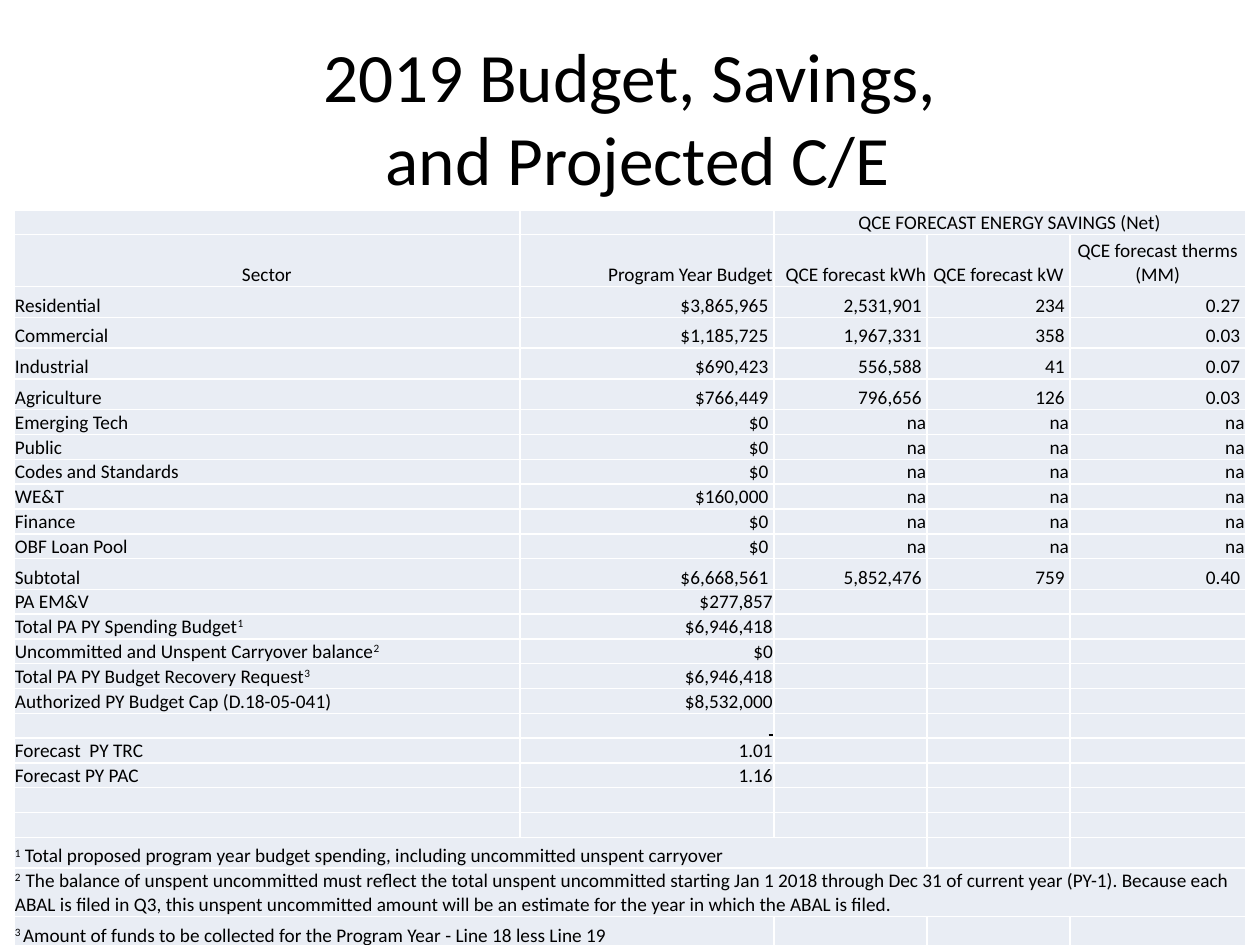
"""Build the 2019 budget, savings and cost-effectiveness slide."""
import pptx
import pptx.dml.color
import pptx.enum.text
import pptx.util

Cm, Pt = pptx.util.Cm, pptx.util.Pt
RGB = pptx.dml.color.RGBColor
ALIGN = pptx.enum.text.PP_ALIGN
ANCHOR = pptx.enum.text.MSO_ANCHOR

THEME = {
    "font": "Calibri",
    "ink": RGB.from_string("000000"),
    "fill": RGB.from_string("E9EDF4"),
    "title": Pt(39.6),
    "cell": Pt(11),
    "super": "30000",
}

TITLE = "2019 Budget, Savings,\v and Projected C/E"
NONE = ("na", "na", "na")
ROWS = [
    ("", "", "QCE FORECAST ENERGY SAVINGS (Net)"),
    ("Sector", "Program Year Budget", "QCE forecast kWh", "QCE forecast kW",
     "QCE forecast therms (MM)"),
    ("Residential", "$3,865,965 ", "2,531,901 ", "234 ", "0.27 "),
    ("Commercial", "$1,185,725 ", "1,967,331 ", "358 ", "0.03 "),
    ("Industrial", "$690,423 ", "556,588 ", "41 ", "0.07 "),
    ("Agriculture", "$766,449 ", "796,656 ", "126 ", "0.03 "),
    ("Emerging Tech", "$0 ", *NONE),
    ("Public", "$0 ", *NONE),
    ("Codes and Standards", "$0 ", *NONE),
    ("WE&T", "$160,000 ", *NONE),
    ("Finance", "$0 ", *NONE),
    ("OBF Loan Pool", "$0 ", *NONE),
    ("Subtotal", "$6,668,561 ", "5,852,476 ", "759 ", "0.40 "),
    ("PA EM&V", "$277,857"),
    ("Total PA PY Spending Budget^1", "$6,946,418"),
    ("Uncommitted and Unspent Carryover balance^2", "$0"),
    ("Total PA PY Budget Recovery Request^3", "$6,946,418"),
    ("Authorized PY Budget Cap (D.18-05-041)", "$8,532,000"),
    ("", " "),
    ("Forecast  PY TRC", "1.01"),
    ("Forecast PY PAC", "1.16"),
    (),
    (),
    ("^1^ Total proposed program year budget spending, including uncommitted "
     "unspent carryover",),
    ("^2  ^The balance of unspent uncommitted must reflect the total unspent "
     "uncommitted starting Jan 1 2018 through Dec 31 of current year (PY-1). "
     "Because each ABAL is filed in Q3, this unspent uncommitted amount will be "
     "an estimate for the year in which the ABAL is filed.",),
    ("^3 ^Amount of funds to be collected for the Program Year - Line 18 less "
     "Line 19",),
]
SPANS = [(0, 2, 4), (23, 0, 2), (24, 0, 4), (25, 0, 1)]
MIDDLE = {(0, 2), (1, 0), (1, 3), (1, 4)}
RULE = (18, 1)

WIDTHS = [10.2, 5.12, 3.09, 2.88, 3.54]
HEIGHTS = ([0.34, 1.05] + [0.62] * 4 + [0.34] * 5 + [0.36, 0.62, 0.38]
           + [0.43] * 3 + [0.38] * 4 + [0.36, 0.34, 0.62, 0.92, 0.62])
LEFT, TOP, HIGH = Cm(0.28), Cm(4.23), Cm(14.53)
INSET = Cm(0.02)


def style(para, size, align):
    para.alignment = align
    para.font.name = THEME["font"]
    para.font.size = size
    para.font.color.rgb = THEME["ink"]


def write(para, text):
    for num, part in enumerate(text.split("^")):
        if part:
            run = para.add_run()
            run.text = part
            if num % 2:
                run._r.get_or_add_rPr().set("baseline", THEME["super"])
    if not text:
        end = para._p.get_or_add_endParaRPr()
        end.set("sz", str(int(THEME["cell"].pt * 100)))


def fill_cell(cell, text, row, col):
    cell.fill.solid()
    cell.fill.fore_color.rgb = THEME["fill"]
    cell.margin_left = cell.margin_right = cell.margin_top = INSET
    cell.margin_bottom = 0
    cell.vertical_anchor = ANCHOR.BOTTOM if row else ANCHOR.TOP
    side = ALIGN.RIGHT if col else ALIGN.LEFT
    para = cell.text_frame.paragraphs[0]
    style(para, THEME["cell"], ALIGN.CENTER if (row, col) in MIDDLE else side)
    write(para, text)
    if (row, col) == RULE:
        para.runs[0].font.underline = para.runs[0].font.bold = True


def add_title(slide):
    title = slide.shapes.title
    title.left, title.top = Cm(1.27), Cm(0.76)
    title.width, title.height = Cm(22.86), Cm(3.18)
    frame = title.text_frame
    frame.text = TITLE
    frame.vertical_anchor = ANCHOR.MIDDLE
    style(frame.paragraphs[0], THEME["title"], ALIGN.CENTER)


def add_budget(slide):
    frame = slide.shapes.add_table(
        len(ROWS), len(WIDTHS), LEFT, TOP, Cm(sum(WIDTHS)), HIGH)
    table = frame.table
    table.first_row = table.horz_banding = False
    for col, width in zip(table.columns, WIDTHS):
        col.width = Cm(width)
    for row, height in zip(table.rows, HEIGHTS):
        row.height = Cm(height)
    frame.height = HIGH
    for row, texts in enumerate(ROWS):
        for col in range(len(WIDTHS)):
            text = texts[col] if col < len(texts) else ""
            fill_cell(table.cell(row, col), text, row, col)
    for row, first, last in SPANS:
        table.cell(row, first).merge(table.cell(row, last))


def main():
    deck = pptx.Presentation()
    deck.slide_width, deck.slide_height = Cm(25.4), Cm(19.05)
    slide = deck.slides.add_slide(deck.slide_layouts[5])
    add_title(slide)
    add_budget(slide)
    deck.save("out.pptx")


if __name__ == "__main__":
    main()
